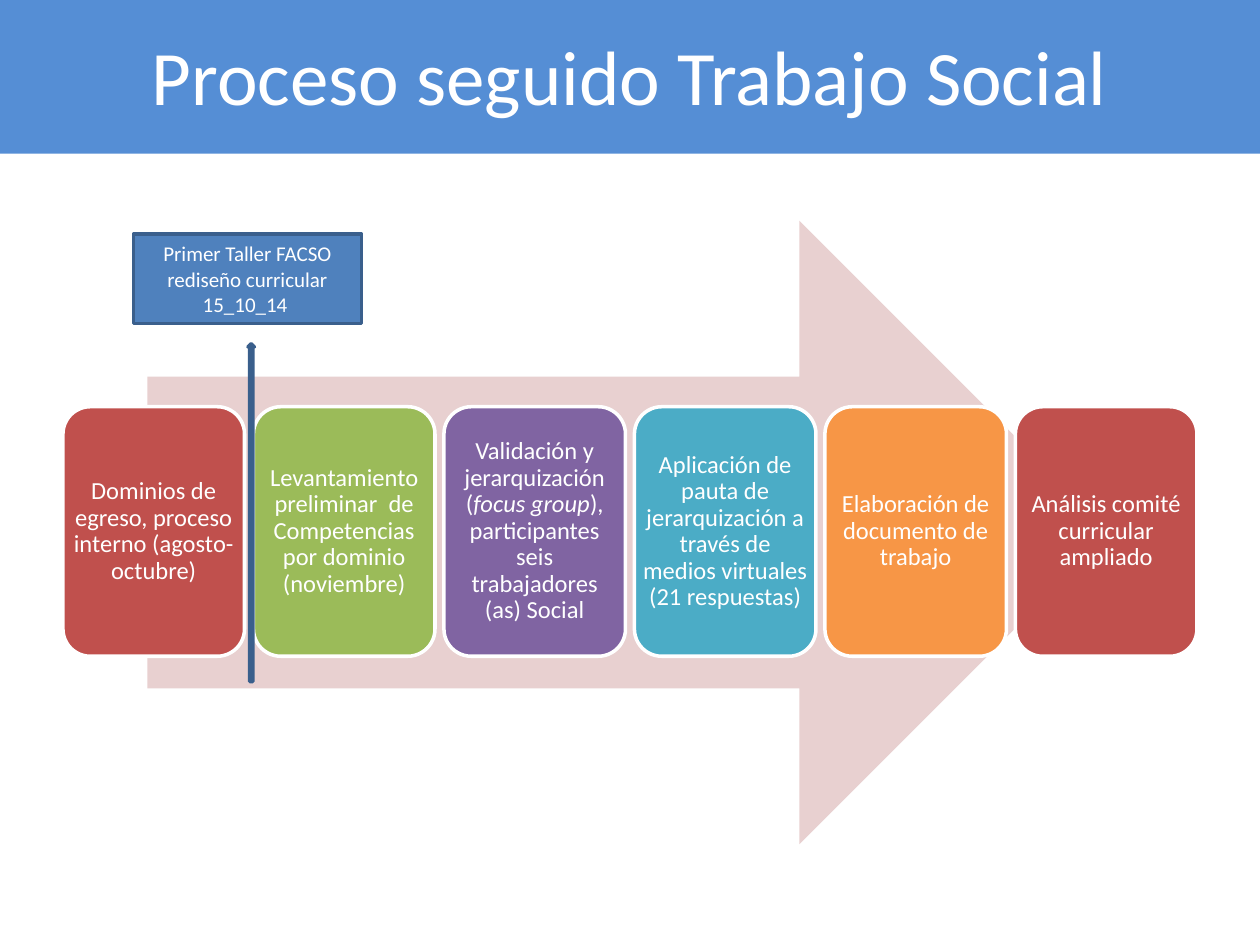
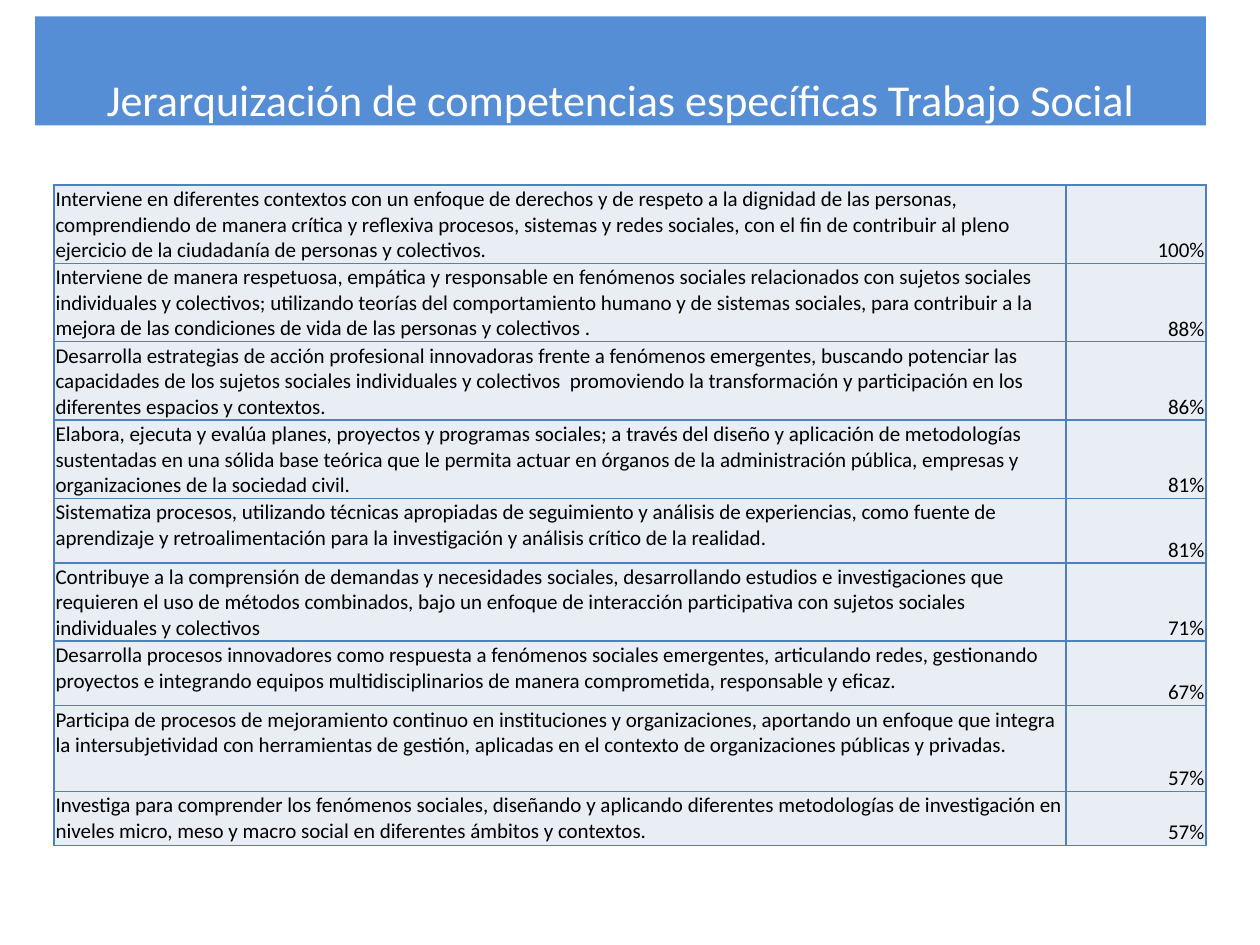
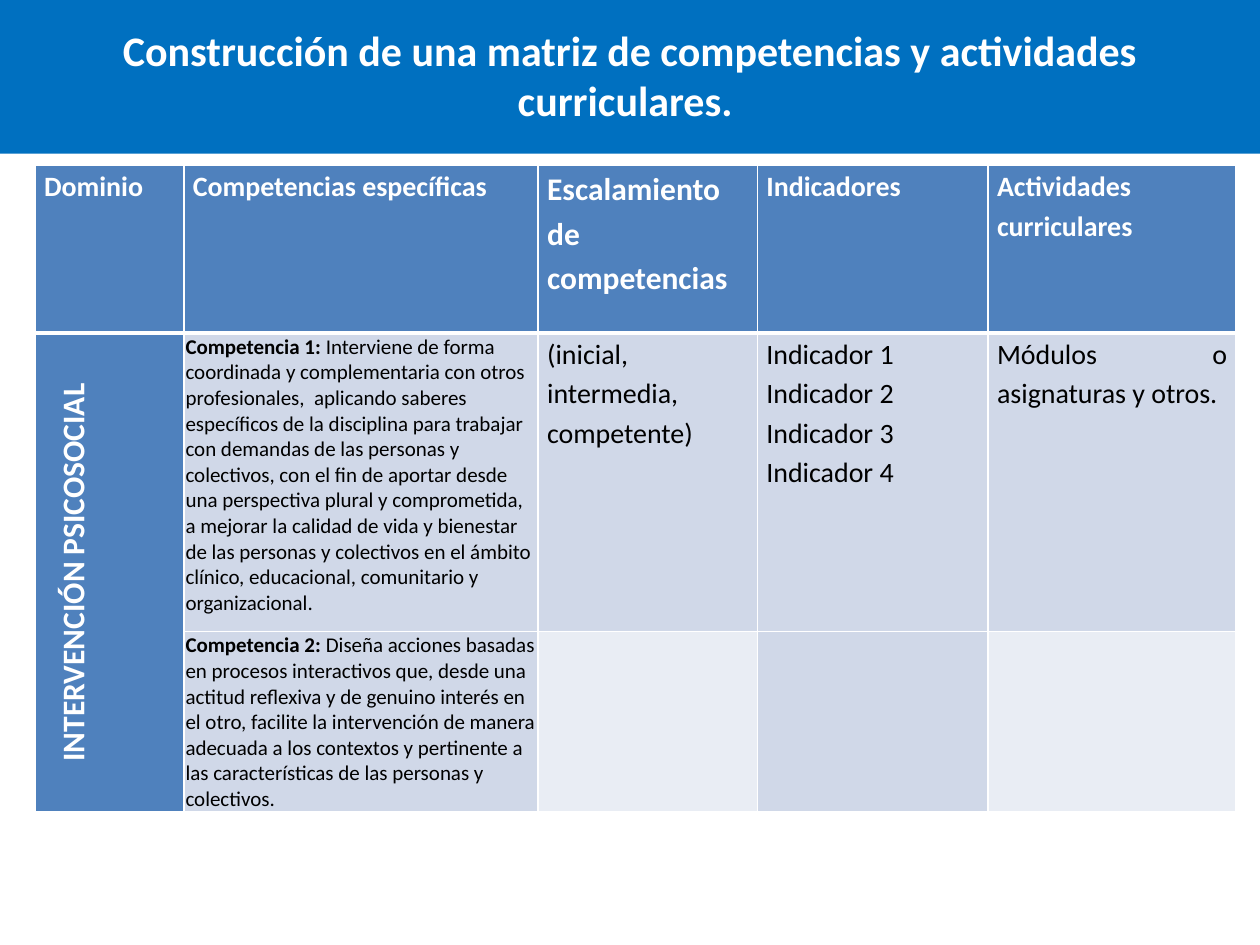
from lxml.etree import SubElement
from pptx import Presentation
from pptx.dml.color import RGBColor
from pptx.enum.shapes import MSO_SHAPE
from pptx.enum.text import MSO_ANCHOR, MSO_AUTO_SIZE, PP_ALIGN
from pptx.oxml.ns import qn
from pptx.util import Cm, Pt

FONT = "Calibri"
WHITE, BLACK, BLUE, NAVY = "FFFFFF", "000000", "4F81BD", "3A5F8C"
SKY, DEEP, PALE, MIST = "558ED5", "0070C0", "E9EDF4", "D0D8E8"
RED = "C0504D"


def paint(fill, code):
    fill.solid()
    fill.fore_color.rgb = RGBColor.from_string(code)


def style(par, size, code, align, bold=False, space=1.0):
    par.alignment = align
    par.line_spacing = space
    for run in par.runs:
        run.font.name = FONT
        run.font.size = Pt(size)
        run.font.bold = bold
        paint(run.font.fill, code)


deck = Presentation()
deck.slide_width, deck.slide_height = Cm(25.4), Cm(19.05)

titles = [
    ("Proceso seguido Trabajo Social", (0, -0.08, 25.4, 3.18), SKY, 44, False),
    ("Jerarquización de competencias específicas Trabajo Social",
     (0.71, 0.33, 23.6, 2.2), SKY, 25.2, False),
    ("Construcción de una matriz de competencias y actividades curriculares. ",
     (0, -0.08, 25.4, 3.18), DEEP, 24, True),
]
pages = []
for text, box, code, size, bold in titles:
    page = deck.slides.add_slide(deck.slide_layouts[5])
    title = page.shapes.title
    title.left, title.top, title.width, title.height = [Cm(n) for n in box]
    paint(title.fill, code)
    frame = title.text_frame
    frame.text = text
    frame.word_wrap = True
    frame.auto_size = MSO_AUTO_SIZE.NONE
    frame.vertical_anchor = MSO_ANCHOR.MIDDLE
    style(frame.paragraphs[0], size, WHITE, PP_ALIGN.CENTER, bold)
    pages.append(page)
flow, rank, matrix = pages
frame = rank.shapes.title.text_frame
frame.vertical_anchor = MSO_ANCHOR.BOTTOM
frame.margin_bottom = 0

steps = [
    ("Dominios de egreso, proceso interno (agosto-octubre)", RED),
    ("Levantamiento preliminar  de Competencias por dominio (noviembre)", "9BBB59"),
    ("Validación y jerarquización (|focus group|), participantes seis "
     "trabajadores (as) Social", "8064A2"),
    ("Aplicación de pauta de jerarquización a través de medios virtuales "
     "(21 respuestas)", "4BACC6"),
    ("Elaboración de documento de trabajo", "F79646"),
    ("Análisis comité curricular ampliado", RED),
]
round_box = MSO_SHAPE.ROUNDED_RECTANGLE
parts = [(MSO_SHAPE.RIGHT_ARROW, (2.97, 4.45, 19.43, 12.57), "E8D0D0", None, "", 0)]
for i, (text, code) in enumerate(steps):
    parts.append((round_box, (1.27 + 3.84 * i, 8.2, 3.66, 5.03), code, WHITE, text, 14))
parts += [
    (MSO_SHAPE.RECTANGLE, (2.69, 4.72, 4.6, 1.8), BLUE, NAVY,
     "Primer Taller FACSO rediseño curricular 15_10_14 ", 12),
    (MSO_SHAPE.UP_ARROW, (5, 6.93, 0.13, 6.81), BLUE, NAVY, "", 0),
]
for kind, box, code, edge, text, size in parts:
    shape = flow.shapes.add_shape(kind, *[Cm(n) for n in box])
    shape.shadow.inherit = False
    paint(shape.fill, code)
    if edge:
        paint(shape.line.fill, edge)
        shape.line.width = Pt(2)
    else:
        shape.line.fill.background()
    if not text:
        continue
    frame = shape.text_frame
    frame.word_wrap = True
    frame.vertical_anchor = MSO_ANCHOR.MIDDLE
    par = frame.paragraphs[0]
    for i, piece in enumerate(text.split("|")):
        run = par.add_run()
        run.text = piece
        run.font.italic = i == 1
    style(par, size, WHITE, PP_ALIGN.CENTER)
    if kind == round_box:
        shape.adjustments[0] = 0.15
        frame.margin_left = frame.margin_right = 0
        par.line_spacing = 0.9

skills = [
    ("Interviene en diferentes contextos con un enfoque de derechos y de respeto a la "
     "dignidad de las personas, comprendiendo de manera crítica y reflexiva procesos, "
     "sistemas y redes sociales, con el fin de contribuir al pleno ejercicio de la "
     "ciudadanía de personas y colectivos.", "100%"),
    ("Interviene de manera respetuosa, empática y responsable en fenómenos sociales "
     "relacionados con sujetos sociales individuales y colectivos; utilizando teorías del "
     "comportamiento humano y de sistemas sociales, para contribuir a la mejora de las "
     "condiciones de vida de las personas y colectivos .", "88%"),
    ("Desarrolla estrategias de acción profesional innovadoras frente a fenómenos "
     "emergentes, buscando potenciar las capacidades de los sujetos sociales individuales "
     "y colectivos  promoviendo la transformación y participación en los diferentes "
     "espacios y contextos.", "86%"),
    ("Elabora, ejecuta y evalúa planes, proyectos y programas sociales; a través del "
     "diseño y aplicación de metodologías sustentadas en una sólida base teórica que le "
     "permita actuar en órganos de la administración pública, empresas y organizaciones "
     "de la sociedad civil.", "81%"),
    ("Sistematiza procesos, utilizando técnicas apropiadas de seguimiento y análisis de "
     "experiencias, como fuente de aprendizaje y retroalimentación para la investigación "
     "y análisis crítico de la realidad.", "81%"),
    ("Contribuye a la comprensión de demandas y necesidades sociales, desarrollando "
     "estudios e investigaciones que requieren el uso de métodos combinados, bajo un "
     "enfoque de interacción participativa con sujetos sociales individuales y colectivos",
     "71%"),
    ("Desarrolla procesos innovadores como respuesta a fenómenos sociales emergentes, "
     "articulando redes, gestionando proyectos e integrando equipos multidisciplinarios "
     "de manera comprometida, responsable y eficaz.", "67%"),
    ("Participa de procesos de mejoramiento continuo en instituciones y organizaciones, "
     "aportando un enfoque que integra la intersubjetividad con herramientas de gestión, "
     "aplicadas en el contexto de organizaciones públicas y privadas.", "57%"),
    ("Investiga para comprender los fenómenos sociales, diseñando y aplicando diferentes "
     "metodologías de investigación en niveles micro, meso y macro social en diferentes "
     "ámbitos y contextos.", "57%"),
]
plan = [
    ("Dominio", "Competencias específicas", "Escalamiento de competencias",
     "Indicadores", "Actividades curriculares"),
    ("INTERVENCIÓN PSICOSOCIAL",
     "Competencia 1: |Interviene de forma coordinada y complementaria con otros "
     "profesionales,  aplicando saberes específicos de la disciplina para trabajar con "
     "demandas de las personas y colectivos, con el fin de aportar desde una perspectiva "
     "plural y comprometida, a mejorar la calidad de vida y bienestar de las personas y "
     "colectivos en el ámbito clínico, educacional, comunitario y organizacional.",
     "(inicial, intermedia, competente)",
     "Indicador 1\nIndicador 2\nIndicador 3\nIndicador 4",
     "Módulos o asignaturas y otros."),
    ("", "Competencia 2: |Diseña acciones basadas en procesos interactivos que, desde una "
     "actitud reflexiva y de genuino interés en el otro, facilite la intervención de "
     "manera adecuada a los contextos y pertinente a las características de las personas "
     "y colectivos.", "", "", ""),
]
grids = [
    (rank, (1.09, 3.73), (20.4, 2.82),
     (1.52, 1.52, 1.47, 1.57, 1.3, 1.3, 1.3, 1.73, 1.09), skills, BLUE),
    (matrix, (0.71, 3.33), (3, 7.14, 4.42, 4.65, 5), (3.38, 6.02, 3.61), plan, WHITE),
]
for page, (left, top), wide, high, data, edge in grids:
    table = page.shapes.add_table(len(high), len(wide), Cm(left), Cm(top),
                                  Cm(sum(wide)), Cm(sum(high))).table
    table.first_row = table.horz_banding = False
    for col, size in zip(table.columns, wide):
        col.width = Cm(size)
    for row, size in zip(table.rows, high):
        row.height = Cm(size)
    if page == matrix:
        table.cell(1, 0).merge(table.cell(2, 0))
    for r, line in enumerate(data):
        for c, text in enumerate(line):
            cell = table.cell(r, c)
            props = cell._tc.get_or_add_tcPr()
            for side in "LRTB":
                thick = page == matrix and (r, side) in ((0, "B"), (1, "T"))
                rule = SubElement(props, qn("a:ln" + side), w=str(Pt(3 if thick else 1)))
                ink = SubElement(rule, qn("a:solidFill"))
                SubElement(ink, qn("a:srgbClr"), val=edge)

            size, ink, align, bold, space = 12, BLACK, PP_ALIGN.LEFT, False, 1.0
            fill, pad, rim = PALE, 0.03, 0.03
            if page == rank:
                if c == 1:
                    align = PP_ALIGN.RIGHT
                    cell.vertical_anchor = MSO_ANCHOR.BOTTOM
            else:
                head = r == 0 or c == 0
                fill = BLUE if head else PALE if r == 2 and c in (2, 4) else MIST
                if head or c != 1:
                    size, align, space = 16, PP_ALIGN.JUSTIFY, 1.15
                    pad, rim = 0.18, 0
                if head:
                    ink, bold = WHITE, True
                if (r, c) == (0, 2):
                    size = 18
                if (r, c) == (1, 0):
                    size, align, space = 18, PP_ALIGN.CENTER, 1.5
                    props.set("vert", "vert270")
            paint(cell.fill, fill)
            cell.margin_left = cell.margin_right = Cm(pad)
            cell.margin_top, cell.margin_bottom = Cm(rim), 0
            if not text:
                continue
            lead, _, rest = text.partition("|")
            cell.text_frame.text = lead
            if rest:
                cell.text_frame.paragraphs[0].add_run().text = rest
            for par in cell.text_frame.paragraphs:
                style(par, size, ink, align, bold, space)
            if rest:
                cell.text_frame.paragraphs[0].runs[0].font.bold = True

deck.save("out.pptx")
